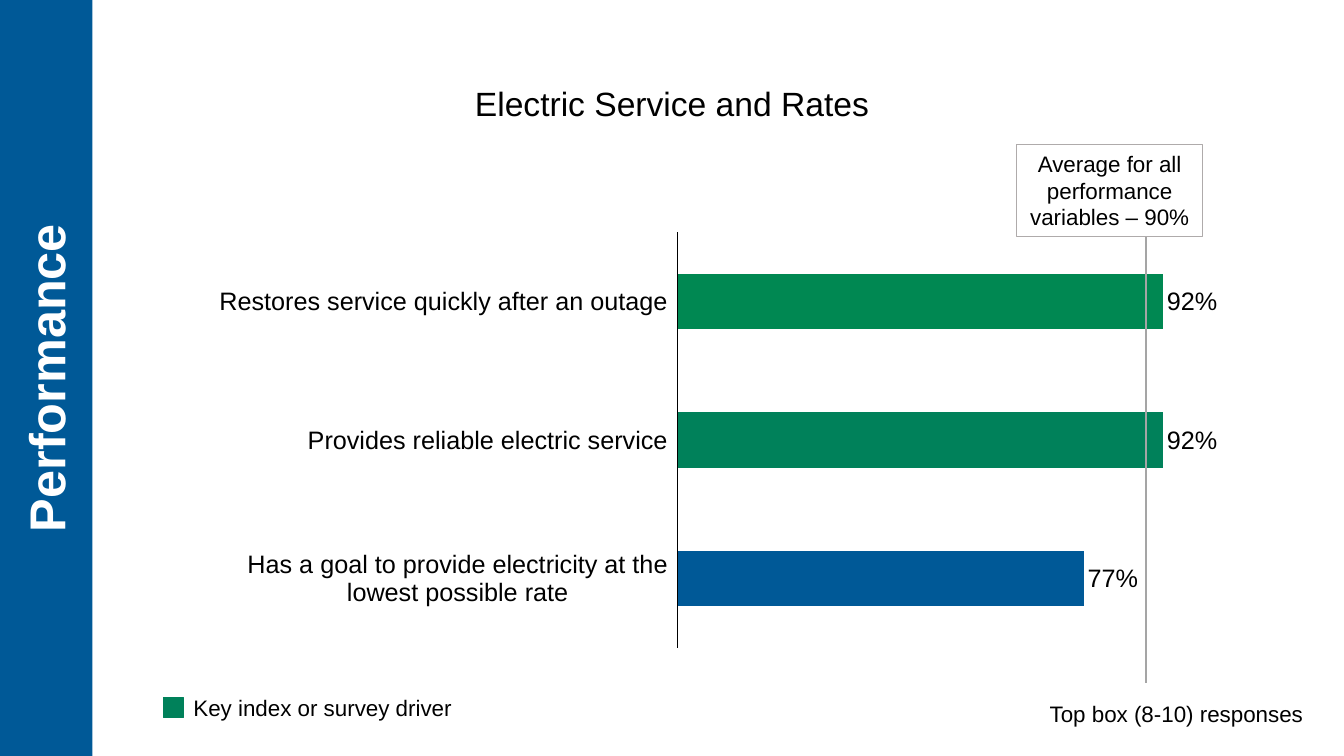
from lxml import etree
from pptx import Presentation
from pptx.chart.data import CategoryChartData as Data
from pptx.dml.color import RGBColor
from pptx.enum.chart import XL_CHART_TYPE as Kind, XL_LABEL_POSITION as Spot
from pptx.enum.chart import XL_TICK_LABEL_POSITION as Tick, XL_TICK_MARK as Mark
from pptx.enum.shapes import MSO_CONNECTOR as Wire, MSO_SHAPE as Form
from pptx.enum.text import MSO_ANCHOR as Anchor, MSO_AUTO_SIZE as Fit, PP_ALIGN as Align
from pptx.oxml import parse_xml
from pptx.oxml.ns import nsdecls, qn
from pptx.util import Inches, Pt

BLACK = RGBColor(0x00, 0x00, 0x00)
WHITE = RGBColor(0xFF, 0xFF, 0xFF)
BLUE = RGBColor(0x00, 0x59, 0x97)
GREEN = RGBColor(0x00, 0x88, 0x52)
TEAL = RGBColor(0x00, 0x81, 0x5A)
GRAY = RGBColor(0xA5, 0xA5, 0xA5)
EDGE = RGBColor(0xAF, 0xAB, 0xAB)

deck = Presentation()
deck.slide_width = Inches(13.33)
deck.slide_height = Inches(7.5)
slide = deck.slides.add_slide(deck.slide_layouts[5])
shapes = slide.shapes
COL = deck.slide_width / 160
ROW = deck.slide_height / 90


def area(col, row, wide, high):
    return round(col * COL), round(row * ROW), round(wide * COL), round(high * ROW)


def write(shape, text, size, align=Align.CENTER, color=BLACK, bold=False, anchor=Anchor.TOP):
    frame = shape.text_frame
    frame.text = text
    frame.word_wrap = True
    frame.auto_size = Fit.NONE
    frame.vertical_anchor = anchor
    para = frame.paragraphs[0]
    para.alignment = align
    para.font.name = "Arial"
    para.font.size = Pt(size)
    para.font.bold = bold
    para.font.color.rgb = color


title = shapes.title
title.left, title.top, title.width, title.height = area(25, 9.25, 110, 6)
write(title, "Electric Service and Rates", 24)

data = Data(number_format="0%")
data.categories = [
    "Restores service quickly after an outage",
    "Provides reliable electric service",
    "Has a goal to provide electricity at the lowest possible rate",
]
data.add_series("Series 1", (0.92, 0.92, 0.77))
chart = shapes.add_chart(Kind.BAR_CLUSTERED, *area(24.05, 26.65, 123.1, 51), data).chart
chart.has_legend = False
chart.has_title = False
chart.font.name = "Arial"
chart.font.size = Pt(18)
chart.font.color.rgb = BLACK

cats = chart.category_axis
cats.reverse_order = True
cats.tick_label_position = Tick.LOW
cats.major_tick_mark = Mark.NONE
cats.has_major_gridlines = False
cats.format.line.color.rgb = BLACK
cats.format.line.width = Pt(0.28)

vals = chart.value_axis
vals.minimum_scale = 0
vals.maximum_scale = 1
vals.major_unit = 0.2
vals.has_major_gridlines = False
vals.visible = False

plot = chart.plots[0]
plot.gap_width = 150
plot.vary_by_categories = False
plot.has_data_labels = True
labels = plot.data_labels
labels.show_value = True
labels.number_format = "0%"
labels.number_format_is_linked = False
labels.position = Spot.OUTSIDE_END

bars = plot.series[0]
bars.format.fill.solid()
bars.format.fill.fore_color.rgb = BLUE
for index, color in enumerate((GREEN, TEAL)):
    fill = bars.points[index].format.fill
    fill.solid()
    fill.fore_color.rgb = color

zone = chart._chartSpace.chart.plotArea
for old in zone.findall(qn("c:layout")):
    zone.remove(old)
frame = parse_xml(f"<c:layout {nsdecls('c')}><c:manualLayout/></c:layout>")
parts = {"layoutTarget": "inner", "xMode": "edge", "yMode": "edge",
         "x": "0.46", "y": "0.02", "w": "0.51", "h": "0.97"}
for name, value in parts.items():
    etree.SubElement(frame[0], qn(f"c:{name}")).set("val", value)
zone.insert(0, frame)

left, top, _, high = area(136.45, 28.1, 0, 53.25)
mean = shapes.add_connector(Wire.STRAIGHT, left, top, left, top + high)
mean.line.color.rgb = GRAY
mean.line.width = Pt(1)
etree.SubElement(mean._element.spPr, qn("a:effectLst"))

note = shapes.add_shape(Form.RECTANGLE, *area(121.05, 17.25, 22.1, 10.9))
note.shadow.inherit = False
note.fill.background()
note.line.color.rgb = EDGE
note.line.width = Pt(0.75)
write(note, "Average for all performance variables – 90%", 16)

for text, place, align in (
    ("Key index or survey driver", (21.85, 82.1, 63.7, 4.4), Align.LEFT),
    ("Top box (8-10) responses", (123.5, 82.8, 33.1, 4.4), Align.CENTER),
):
    write(shapes.add_textbox(*area(*place)), text, 16, align)

key = shapes.add_shape(Form.RECTANGLE, *area(19.45, 83.05, 2.4, 2.4))
key.shadow.inherit = False
key.fill.solid()
key.fill.fore_color.rgb = TEAL
key.line.color.rgb = TEAL
key.line.width = Pt(1)

band = shapes.add_shape(Form.RECTANGLE, *area(-39.5, 39.5, 90, 11))
band.rotation = 270
band.shadow.inherit = False
band.fill.solid()
band.fill.fore_color.rgb = BLUE
band.line.fill.background()
write(band, "Performance", 36, color=WHITE, bold=True, anchor=Anchor.MIDDLE)
band.text_frame.margin_top = 0
band.text_frame.margin_bottom = Inches(0.02)

deck.save("out.pptx")
